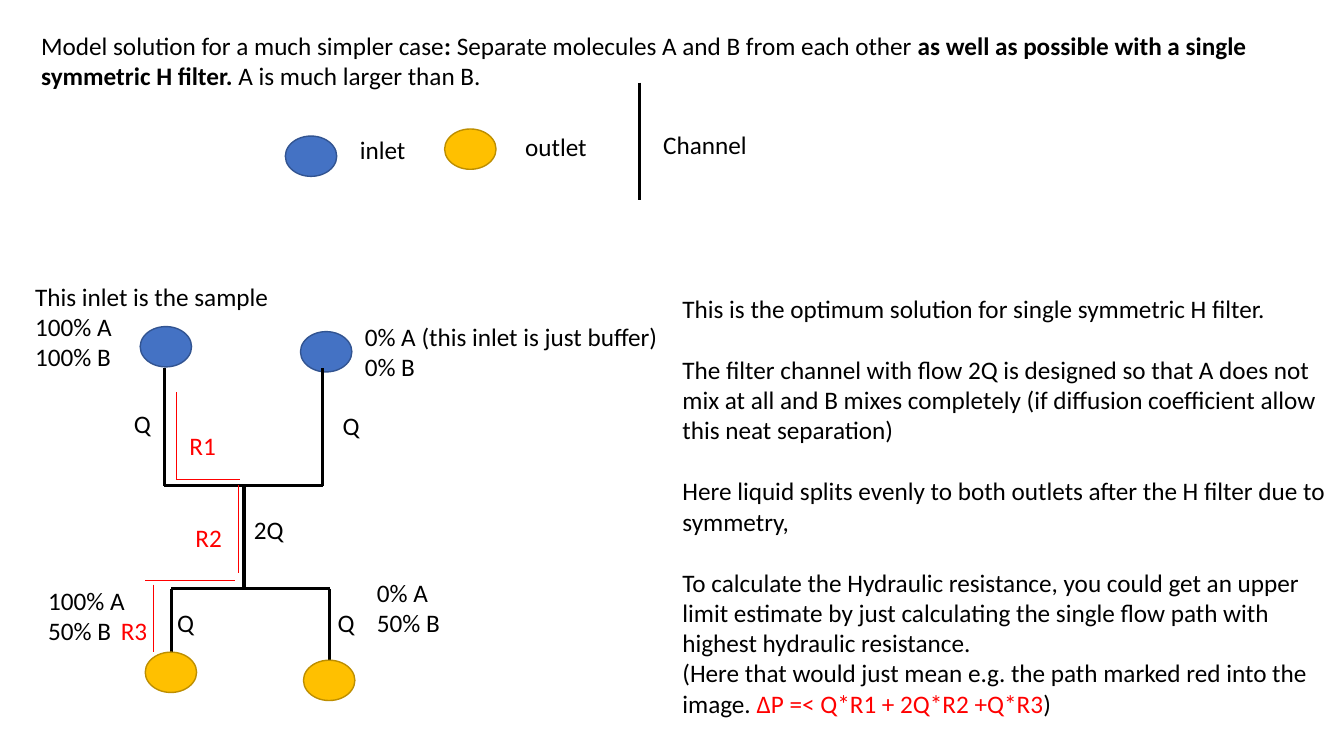
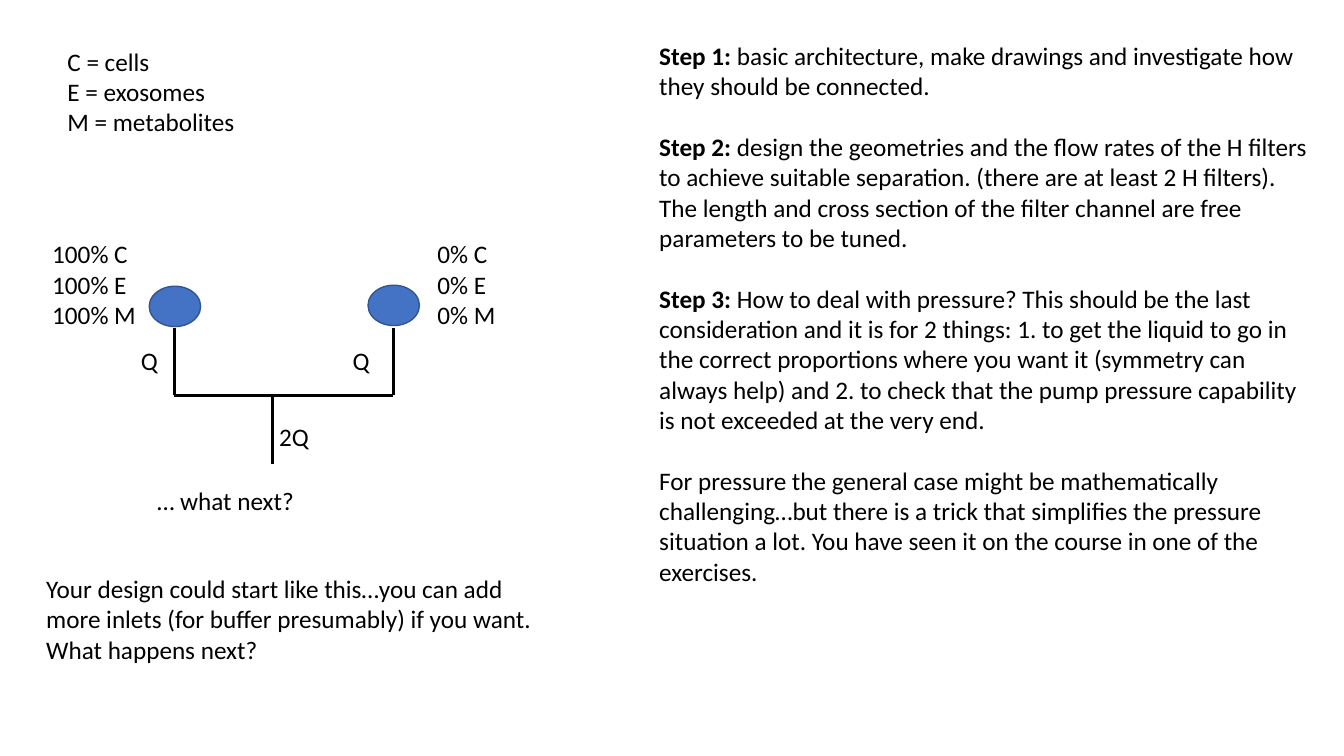
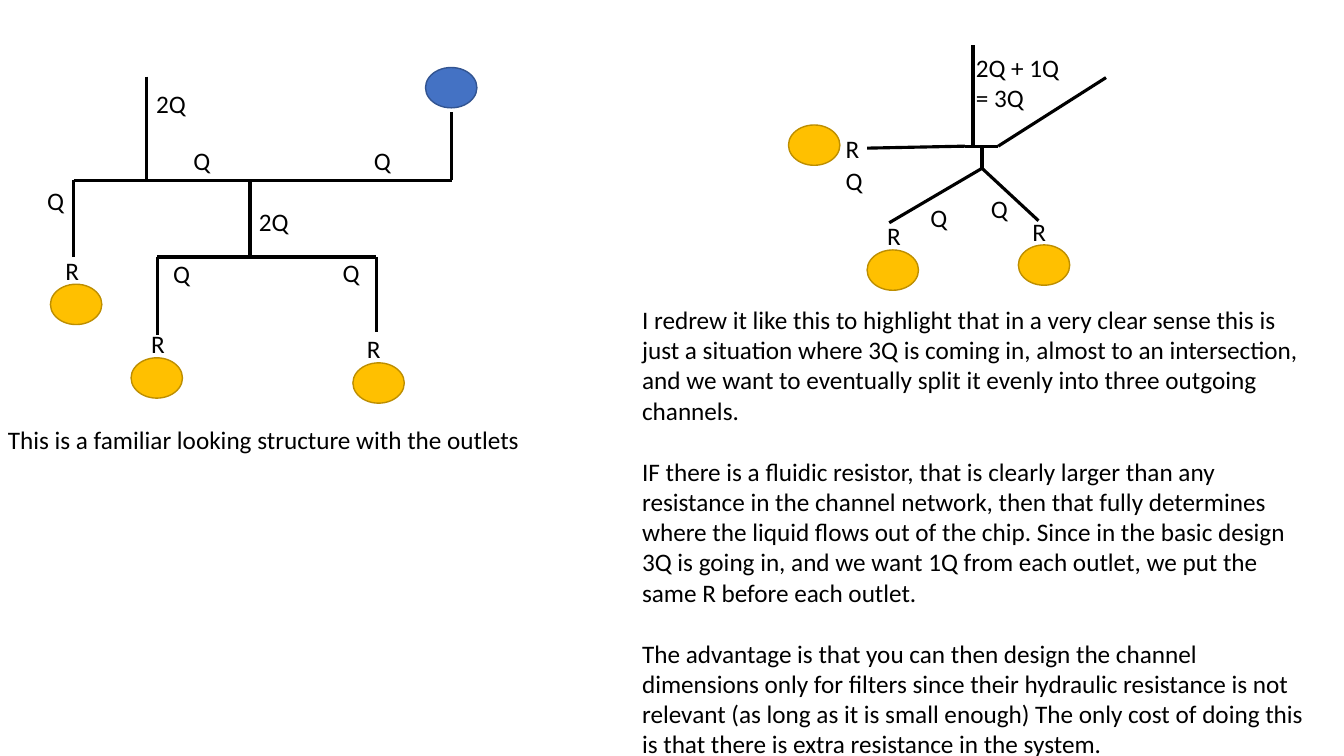
from lxml.etree import SubElement
from pptx import Presentation
from pptx.dml.color import RGBColor
from pptx.enum.shapes import MSO_CONNECTOR, MSO_SHAPE
from pptx.enum.text import MSO_AUTO_SIZE
from pptx.oxml.ns import qn
from pptx.util import Inches, Pt

BLACK, RED = "000000", "FF0000"
INLET, OUTLET = ("4472C4", "325491"), ("FFC000", "BD8E00")
LINE_GAP = 22


def rgb(value):
    return RGBColor.from_string(value)


class Deck:
    """Draws channel diagrams and notes in one style on the current slide."""

    def __init__(self):
        self.prs = Presentation()
        self.prs.slide_width = Inches(13.33)
        self.prs.slide_height = Inches(7.5)

    def new_slide(self):
        self.shapes = self.prs.slides.add_slide(self.prs.slide_layouts[6]).shapes

    def text(self, x, y, w, *paras, h=None, color=BLACK, gap=0):
        h = h or 0.4 + 0.3 * (len(paras) - 1)
        sp = self.shapes.add_textbox(Inches(x), Inches(y), Inches(w), Inches(h))
        tf = sp.text_frame
        tf.word_wrap = True
        tf.auto_size = MSO_AUTO_SIZE.SHAPE_TO_FIT_TEXT
        for i, para in enumerate(paras):
            p = tf.paragraphs[0] if i == 0 else tf.add_paragraph()
            if i and gap:
                p.space_before = Pt(gap)
            p.font.name, p.font.size = "Calibri", Pt(18)
            p.font.color.rgb = rgb(color)
            for run in [(para, "")] if isinstance(para, str) else para:
                r = p.add_run()
                r.text, style = run
                if style == "bold":
                    r.font.bold = True
                elif style:
                    r.font.color.rgb = rgb(style)
        return tf.paragraphs

    def labels(self, label, *places, w=0.4, color=BLACK):
        for x, y in places:
            self.text(x, y, w, label, color=color)

    def ports(self, kind, *places):
        fill, line = kind
        for x, y in places:
            sp = self.shapes.add_shape(MSO_SHAPE.OVAL, Inches(x), Inches(y), Inches(0.51), Inches(0.4))
            sp.shadow.inherit = False
            sp.fill.solid()
            sp.fill.fore_color.rgb = rgb(fill)
            sp.line.color.rgb = rgb(line)
            sp.line.width = Pt(1)

    def channel(self, *points, color=BLACK, width=2.25):
        for (x1, y1), (x2, y2) in zip(points, points[1:]):
            c = self.shapes.add_connector(
                MSO_CONNECTOR.STRAIGHT, Inches(x1), Inches(y1), Inches(x2), Inches(y2))
            c.line.color.rgb = rgb(color)
            c.line.width = Pt(width)
            SubElement(c._element.spPr, qn("a:effectLst"))


def model_solution(d):
    d.new_slide()
    d.text(0.31, 0.25, 12.77, [
        ("Model solution for a much simpler case", ""), (": ", "bold"),
        ("Separate molecules A and B from each other ", ""),
        ("as well as possible with a single symmetric H filter. ", "bold"),
        ("A is much larger than B.", "")], h=0.71)

    d.ports(INLET, (2.83, 1.35), (1.39, 3.24), (2.98, 3.29))
    d.ports(OUTLET, (4.41, 1.28))
    d.text(3.47, 1.28, 0.99, "inlet")
    d.text(5.11, 1.25, 0.99, "outlet")
    d.channel((6.34, 0.82), (6.34, 1.98))
    d.text(6.48, 1.23, 1.1, "Channel")

    d.text(0.25, 2.74, 2.6, "This inlet is the sample", "100% A", "100% B")
    d.text(3.52, 3.14, 3.2, "0% A (this inlet is just buffer)", "0% B")
    d.channel((1.63, 3.65), (1.63, 4.82), (3.2, 4.82), (3.2, 3.65))
    d.channel((2.42, 4.82), (2.42, 5.84))
    d.channel((1.7, 6.6), (1.7, 5.84), (3.27, 5.84), (3.27, 6.6))
    d.ports(OUTLET, (1.44, 6.47), (3.01, 6.55))
    d.text(0.38, 5.76, 1.05, "100% A", "50% B")
    d.text(3.64, 5.68, 0.9, "0% A", "50% B")
    d.labels("Q", (3.3, 4.02), (1.23, 4), (1.66, 5.98), (3.25, 5.98))
    d.labels("2Q", (2.42, 5.05), w=0.58)

    for path in (((1.75, 3.89), (1.75, 4.76), (2.38, 4.76)),
                 ((2.36, 4.81), (2.36, 5.68)),
                 ((2.33, 5.76), (1.44, 5.76)),
                 ((1.52, 5.8), (1.52, 6.47))):
        d.channel(*path, color=RED, width=0.5)
    for label, place in (("R1", (1.78, 4.22)), ("R2", (1.84, 5.13)), ("R3", (1.1, 6.06))):
        d.labels(label, place, w=0.5, color=RED)

    notes = d.text(
        6.67, 2.86, 6.74,
        "This is the optimum solution for single symmetric H filter.",
        "The filter channel with flow 2Q is designed so that A does not mix at all and B mixes "
        "completely (if diffusion coefficient allow this neat separation)",
        "Here liquid splits evenly to both outlets after the H filter due to symmetry,",
        "To calculate the Hydraulic resistance, you could get an upper limit estimate by just "
        "calculating the single flow path with highest hydraulic resistance.",
        [("(Here that would just mean e.g. the path marked red into the image. ", ""),
         ("ΔP =< Q*R1 + 2Q*R2 +Q*R3", RED), (")", "")],
        h=4.34, gap=LINE_GAP)
    notes[-1].space_before = Pt(0)


def design_steps(d):
    d.new_slide()
    d.text(0.57, 0.41, 3.58, "C = cells", "E = exosomes", "M = metabolites")
    for x, w, share in ((0.42, 1.1, "100%"), (4.24, 0.85, "0%")):
        d.text(x, 2.32, w, *(f"{share} {name}" for name in "CEM"))
    d.ports(INLET, (1.48, 2.84), (3.65, 2.83))
    d.channel((1.73, 3.25), (1.73, 3.92), (3.9, 3.92), (3.9, 3.25))
    d.channel((2.7, 3.92), (2.7, 4.6))
    d.labels("Q", (1.3, 3.38), (3.4, 3.38))
    d.labels("2Q", (2.67, 4.13), w=0.73)
    d.text(1.46, 4.77, 1.65, "… what next?")
    d.text(0.36, 5.64, 5.19,
           "Your design could start like this…you can add more inlets (for buffer presumably) "
           "if you want.",
           "What happens next?", h=1.01)

    d.text(
        6.44, 0.35, 6.7,
        [("Step 1: ", "bold"),
         ("basic architecture, make drawings and investigate how they should be connected.", "")],
        [("Step 2: ", "bold"),
         ("design the geometries and the flow rates of the H filters to achieve suitable "
          "separation. (there are at least 2 H filters). The length and cross section of the "
          "filter channel are free parameters to be tuned.", "")],
        [("Step 3: ", "bold"),
         ("How to deal with pressure? This should be the last consideration and it is for 2 "
          "things: 1. to get the liquid to go in the correct proportions where you want it "
          "(symmetry can always help) and 2. to check that the pump pressure capability is not "
          "exceeded at the very end.", "")],
        "For pressure the general case might be mathematically challenging…but there is a trick "
        "that simplifies the pressure situation a lot. You have seen it on the course in one of "
        "the exercises.",
        h=5.55, gap=LINE_GAP)


def outlet_resistors(d):
    d.new_slide()
    d.channel((1.45, 0.76), (1.45, 1.79))
    d.channel((0.73, 2.55), (0.73, 1.79), (4.48, 1.79), (4.48, 1.11))
    d.channel((2.48, 1.79), (2.48, 2.55))
    d.channel((1.56, 3.32), (1.56, 2.55), (3.73, 2.55), (3.73, 3.29))
    d.ports(INLET, (4.22, 0.67))
    d.ports(OUTLET, (0.5, 2.82), (1.3, 3.55), (3.5, 3.6))
    d.labels("2Q", (1.45, 0.83), (2.47, 2), w=0.73)
    d.labels("Q", (0.37, 1.79), (3.61, 1.39), (1.82, 1.39), (1.62, 2.51), (3.3, 2.5))
    d.labels("R", (0.55, 2.48), (1.4, 3.21), (3.54, 3.26))
    d.text(-0.02, 4.16, 5.4, "This is a familiar looking structure with the outlets")

    d.channel((9.65, 0.45), (9.65, 1.47))
    d.channel((8.6, 1.47), (9.57, 1.45), (9.9, 1.45), (10.97, 0.77))
    d.channel((9.74, 1.45), (9.74, 1.67), (8.82, 2.21))
    d.channel((9.74, 1.67), (10.3, 2.19))
    d.ports(OUTLET, (7.82, 1.24), (8.6, 2.48), (10.1, 2.43))
    d.text(9.58, 0.47, 1.13, "2Q + 1Q = 3Q", h=0.71)
    d.labels("Q", (8.29, 1.59), (9.13, 1.96), (9.73, 1.87))
    d.labels("R", (8.29, 1.27), (8.7, 2.14), (10.14, 2.1))

    d.text(
        6.27, 2.97, 6.76,
        "I redrew it like this to highlight that in a very clear sense this is just a situation "
        "where 3Q is coming in, almost to an intersection, and we want to eventually split it "
        "evenly into three outgoing channels.",
        "IF there is a fluidic resistor, that is clearly larger than any resistance in the "
        "channel network, then that fully determines where the liquid flows out of the chip. "
        "Since in the basic design 3Q is going in, and we want 1Q from each outlet, we put the "
        "same R before each outlet.",
        "The advantage is that you can then design the channel dimensions only for filters since "
        "their hydraulic resistance is not relevant (as long as it is small enough) The only "
        "cost of doing this is that there is extra resistance in the system.",
        h=4.64, gap=LINE_GAP)


def main():
    d = Deck()
    model_solution(d)
    design_steps(d)
    outlet_resistors(d)
    d.prs.save("out.pptx")


if __name__ == "__main__":
    main()
